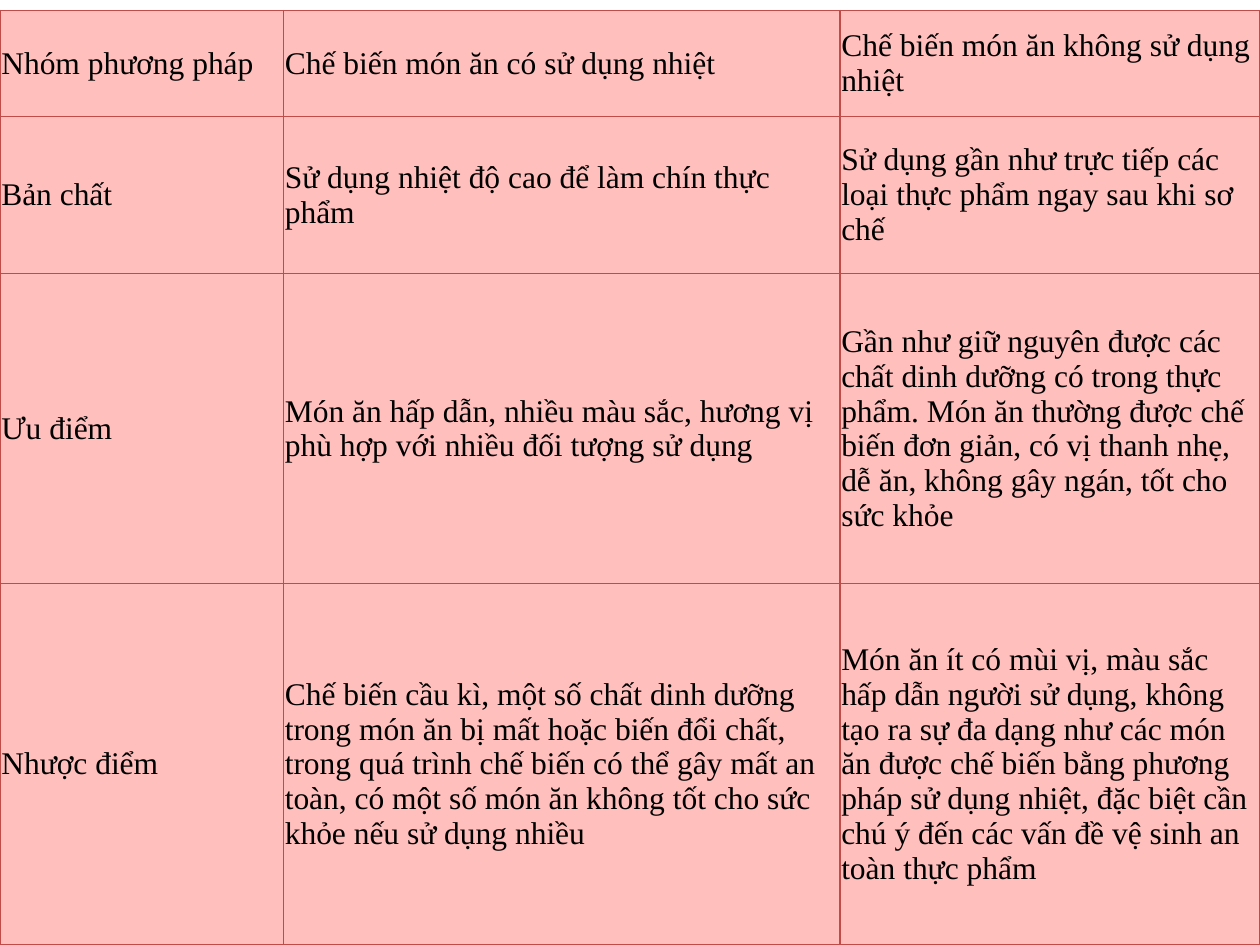
import lxml.etree
import pptx
import pptx.dml.color
import pptx.enum.text
import pptx.oxml.ns
import pptx.util

Pt = pptx.util.Pt
RGB = pptx.dml.color.RGBColor
qn = pptx.oxml.ns.qn

PINK = RGB(0xFF, 0xBF, 0xBD)
RED = RGB(0xBF, 0x4C, 0x48)
BLACK = RGB(0, 0, 0)

WIDTHS = [162, 318, 240]
HEIGHTS = [60.5, 90, 177, 206.5]
ROWS = [
    ["Nhóm phương pháp",
     "Chế biến món ăn có sử dụng nhiệt",
     "Chế biến món ăn không sử dụng nhiệt"],
    ["Bản chất",
     "Sử dụng nhiệt độ cao để làm chín thực phẩm",
     "Sử dụng gần như trực tiếp các loại thực phẩm ngay sau khi sơ chế"],
    ["Ưu điểm",
     "Món ăn hấp dẫn, nhiều màu sắc, hương vị phù hợp với nhiều đối tượng sử dụng",
     "Gần như giữ nguyên được các chất dinh dưỡng có trong thực phẩm. "
     "Món ăn thường được chế biến đơn giản, có vị thanh nhẹ, dễ ăn, "
     "không gây ngán, tốt cho sức khỏe"],
    ["Nhược điểm",
     "Chế biến cầu kì, một số chất dinh dưỡng trong món ăn bị mất hoặc biến đổi chất, "
     "trong quá trình chế biến có thể gây mất an toàn, "
     "có một số món ăn không tốt cho sức khỏe nếu sử dụng nhiều",
     "Món ăn ít có mùi vị, màu sắc hấp dẫn người sử dụng, "
     "không tạo ra sự đa dạng như các món ăn được chế biến bằng phương pháp sử dụng nhiệt, "
     "đặc biệt cần chú ý đến các vấn đề vệ sinh an toàn thực phẩm"],
]


def add_borders(cell):
    props = cell._tc.get_or_add_tcPr()
    for side in ("a:lnL", "a:lnR", "a:lnT", "a:lnB"):
        line = lxml.etree.SubElement(props, qn(side), w=str(Pt(0.75)))
        fill = lxml.etree.SubElement(line, qn("a:solidFill"))
        lxml.etree.SubElement(fill, qn("a:srgbClr"), val=str(RED))


deck = pptx.Presentation()
deck.slide_width, deck.slide_height = Pt(720), Pt(540)
slide = deck.slides.add_slide(deck.slide_layouts[6])

frame = slide.shapes.add_table(
    len(ROWS), len(WIDTHS), Pt(0), Pt(6), Pt(sum(WIDTHS)), Pt(sum(HEIGHTS)))
table = frame.table
for col, width in zip(table.columns, WIDTHS):
    col.width = Pt(width)
for row, height, texts in zip(table.rows, HEIGHTS, ROWS):
    row.height = Pt(height)
    for cell, text in zip(row.cells, texts):
        add_borders(cell)
        cell.fill.solid()
        cell.fill.fore_color.rgb = PINK
        cell.vertical_anchor = pptx.enum.text.MSO_ANCHOR.MIDDLE
        cell.margin_left = cell.margin_right = Pt(0.75)
        cell.margin_top = cell.margin_bottom = Pt(0.75)
        cell.text_frame.text = text
        font = cell.text_frame.paragraphs[0].runs[0].font
        font.name = "Times New Roman"
        font.size = Pt(18)
        font.bold = False
        font.color.rgb = BLACK

deck.save("out.pptx")
